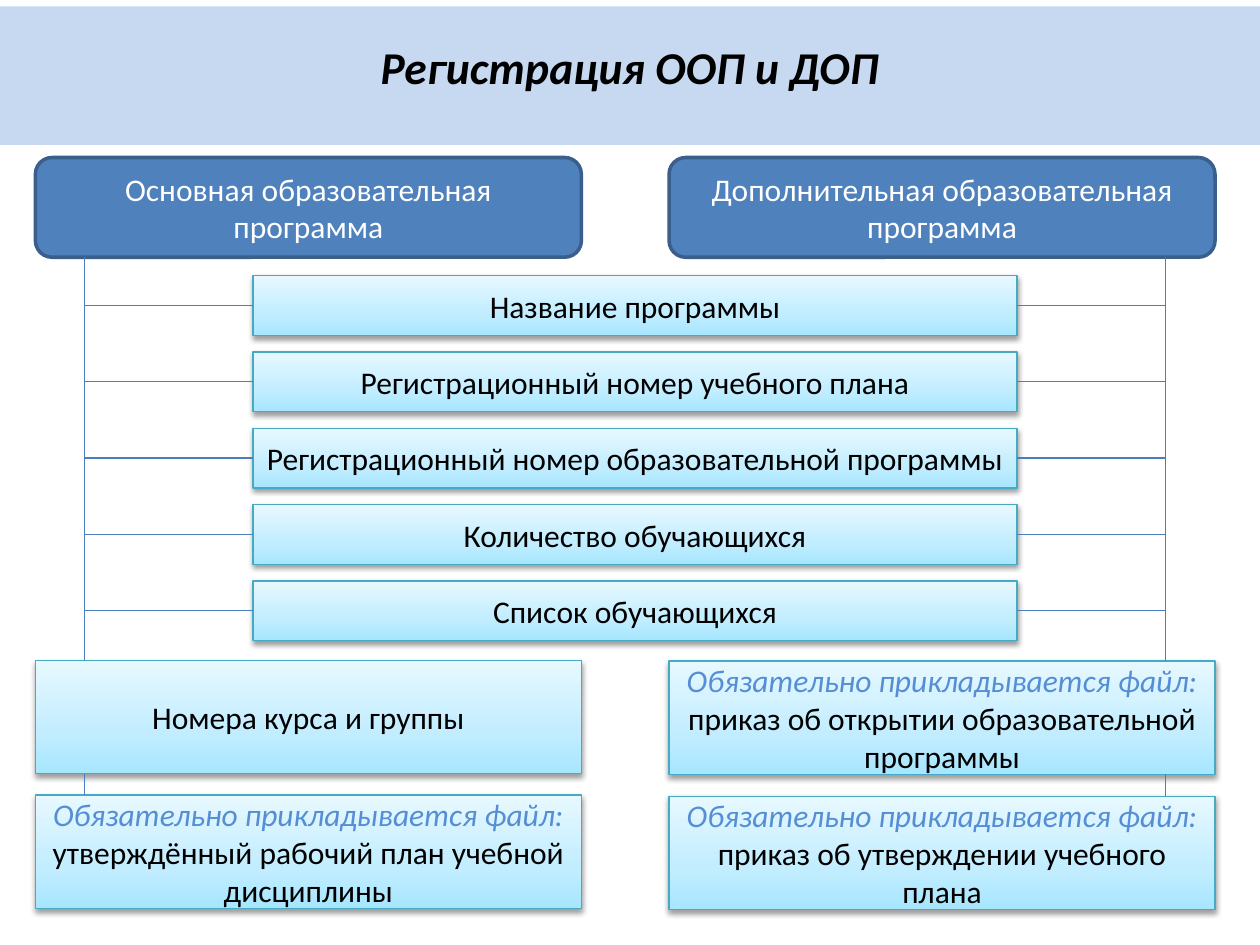
from pptx import Presentation
from pptx.util import Pt
from pptx.dml.color import RGBColor
from pptx.enum.shapes import MSO_SHAPE as Shape, MSO_CONNECTOR as Connector
from pptx.enum.text import PP_ALIGN as Align, MSO_ANCHOR as Anchor
from pptx.oxml import parse_xml
from pptx.oxml.ns import nsdecls
from lxml.etree import SubElement

TITLE = "Регистрация ООП и ДОП"
NOTE = "Обязательно прикладывается файл: "
PROGRAMS = ["Основная образовательная программа", "Дополнительная образовательная программа"]
SHARED = [
    "Название программы",
    "Регистрационный номер учебного плана",
    "Регистрационный номер образовательной программы",
    "Количество обучающихся",
    "Список обучающихся",
]
DETAILS = [
    [("", "Номера курса и группы"), (NOTE, "утверждённый рабочий план учебной дисциплины")],
    [(NOTE, "приказ об открытии образовательной программы"), (NOTE, "приказ об утверждении учебного плана")],
]
COLORS = {
    "band": "C6D9F1", "program": "4F81BD", "program_line": "3A5F8C",
    "box_line": "46AAC5", "connector": "4B7EBC", "note": "558ED5",
    "black": "000000", "white": "FFFFFF",
}
GRADIENT = [(0, "A7E6FF"), (35, "C1EDFF"), (100, "E7F8FF")]

COLUMN_LEFTS, COLUMN_WIDTH = [20.2, 382.3], 312
PROGRAM_TOP, PROGRAM_HEIGHT = 90, 57
ROW_LEFT, ROW_TOP, ROW_WIDTH, ROW_HEIGHT, ROW_STEP = 144.6, 157.6, 436.6, 34, 43.6
DETAIL_TOPS, DETAIL_HEIGHT = [[377.4, 454.4], [377.7, 455]], 64.8
RAILS = [48.3, 666]
ROW_EDGES = [ROW_LEFT, ROW_LEFT + ROW_WIDTH]

deck = Presentation()
deck.slide_width, deck.slide_height = Pt(720), Pt(540)
page = deck.slides.add_slide(deck.slide_layouts[6])


def color(name):
    return RGBColor.from_string(COLORS[name])


def write(box, spans, size=18, bold=False):
    frame = box.text_frame
    frame.word_wrap = True
    para = frame.paragraphs[0]
    para.alignment = Align.CENTER
    para.font.name, para.font.size, para.font.bold = "Calibri", Pt(size), bold
    for text, tint, italic in spans:
        span = para.add_run()
        span.text = text
        span.font.italic = italic
        span.font.color.rgb = color(tint)


def add_box(kind, left, top, width, height, line=None, weight=0.75):
    box = page.shapes.add_shape(kind, Pt(left), Pt(top), Pt(width), Pt(height))
    box.shadow.inherit = False
    box.text_frame.vertical_anchor = Anchor.MIDDLE
    if line:
        box.line.color.rgb = color(line)
        box.line.width = Pt(weight)
    else:
        box.line.fill.background()
    return box


def fill_solid(box, name):
    box.fill.solid()
    box.fill.fore_color.rgb = color(name)


def add_gradient_box(left, top, width, height, spans):
    box = add_box(Shape.FLOWCHART_PROCESS, left, top, width, height, "box_line")
    stops = "".join(
        f'<a:gs pos="{place * 1000}"><a:srgbClr val="{tint}"/></a:gs>' for place, tint in GRADIENT
    )
    properties = box._element.spPr
    properties.insert(2, parse_xml(
        f'<a:gradFill {nsdecls("a")} rotWithShape="1"><a:gsLst>{stops}</a:gsLst>'
        '<a:lin ang="16200000" scaled="0"/></a:gradFill>'
    ))
    properties.find("{*}effectLst").append(parse_xml(
        f'<a:outerShdw {nsdecls("a")} blurRad="{Pt(3.1)}" dist="{Pt(1.6)}" dir="5400000" rotWithShape="0">'
        '<a:srgbClr val="000000"><a:alpha val="38000"/></a:srgbClr></a:outerShdw>'
    ))
    box.text_frame.margin_left = box.text_frame.margin_right = Pt(6)
    write(box, spans)


def add_line(x1, y1, x2, y2):
    line = page.shapes.add_connector(Connector.STRAIGHT, Pt(x1), Pt(y1), Pt(x2), Pt(y2))
    line.line.color.rgb = color("connector")
    line.line.width = Pt(0.75)
    properties = line._element.spPr
    SubElement(properties, properties.find("{*}ln").tag.replace("}ln", "}effectLst"))


band = add_box(Shape.RECTANGLE, 0, 3.6, 720, 79.2)
fill_solid(band, "band")
title = page.shapes.add_textbox(Pt(0), Pt(18.7), Pt(720), Pt(44))
write(title, [(TITLE, "black", True)], 26, True)

for row, text in enumerate(SHARED):
    top = ROW_TOP + row * ROW_STEP
    add_gradient_box(ROW_LEFT, top, ROW_WIDTH, ROW_HEIGHT, [(text, "black", False)])
    middle = top + ROW_HEIGHT / 2
    for rail, edge in zip(RAILS, ROW_EDGES):
        add_line(min(rail, edge), middle, max(rail, edge), middle)

for left, program, details, tops, rail in zip(COLUMN_LEFTS, PROGRAMS, DETAILS, DETAIL_TOPS, RAILS):
    box = add_box(Shape.ROUNDED_RECTANGLE, left, PROGRAM_TOP, COLUMN_WIDTH, PROGRAM_HEIGHT, "program_line", 2)
    fill_solid(box, "program")
    write(box, [(program, "white", False)])
    for top, (note, text) in zip(tops, details):
        spans = [(note, "note", True)] if note else []
        add_gradient_box(left, top, COLUMN_WIDTH, DETAIL_HEIGHT, spans + [(text, "black", False)])
    add_line(rail, PROGRAM_TOP + PROGRAM_HEIGHT, rail, tops[0])
    add_line(rail, tops[0] + DETAIL_HEIGHT, rail, tops[1])

deck.save("out.pptx")
